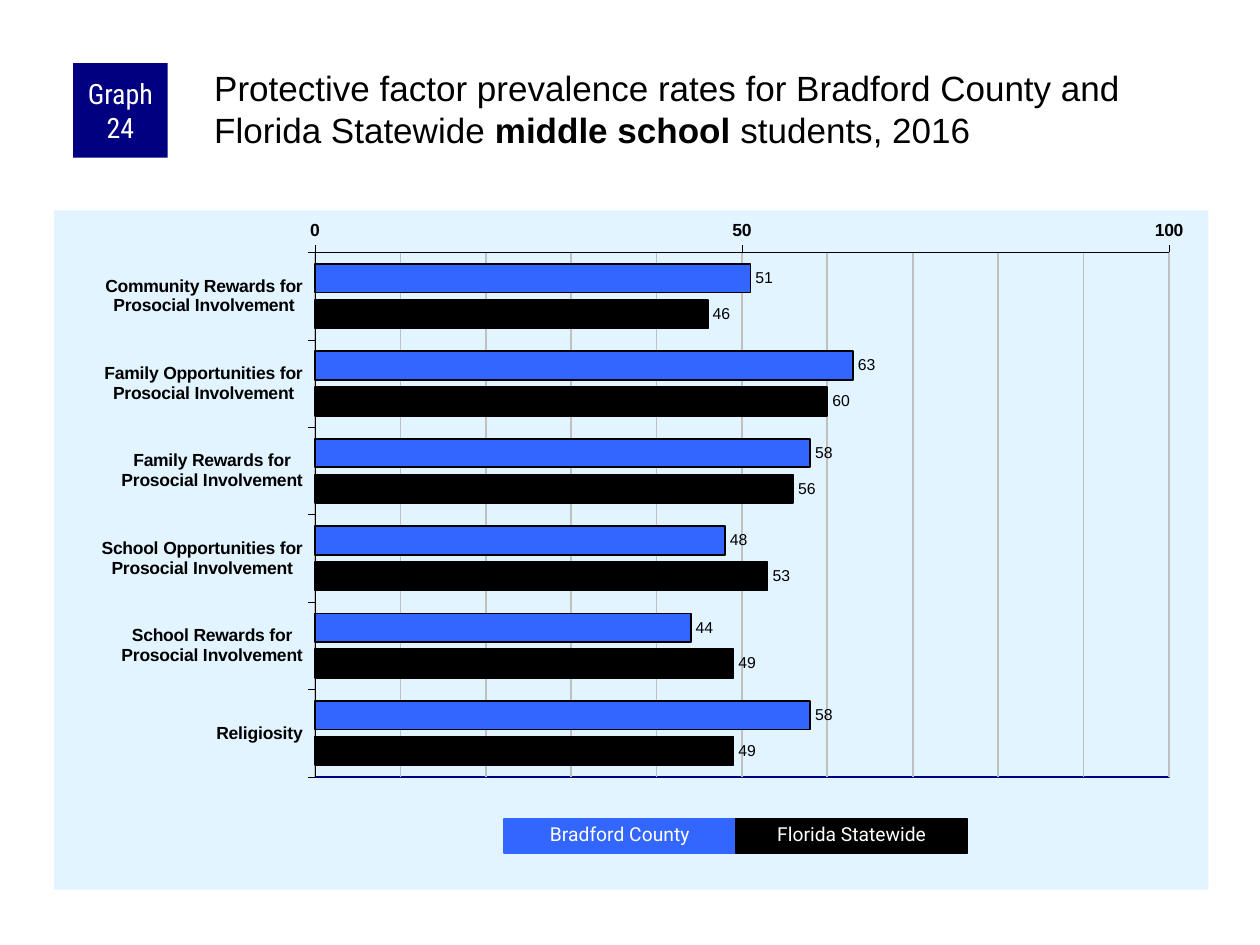
from dataclasses import dataclass

from lxml import etree
from pptx import Presentation
from pptx.chart.data import CategoryChartData
from pptx.dml.color import RGBColor
from pptx.enum.chart import (XL_AXIS_CROSSES, XL_CHART_TYPE, XL_LABEL_POSITION,
                             XL_TICK_MARK)
from pptx.enum.shapes import MSO_SHAPE
from pptx.enum.text import MSO_ANCHOR, MSO_AUTO_SIZE, PP_ALIGN
from pptx.oxml import parse_xml
from pptx.oxml.ns import nsdecls, qn
from pptx.util import Inches, Pt

BAR = XL_CHART_TYPE.BAR_CLUSTERED
OUT_END = XL_LABEL_POSITION.OUTSIDE_END
TICK_OUT, TICK_NONE = XL_TICK_MARK.OUTSIDE, XL_TICK_MARK.NONE
AT_MAX = XL_AXIS_CROSSES.MAXIMUM
RECT = MSO_SHAPE.RECTANGLE
TOP, MIDDLE = MSO_ANCHOR.TOP, MSO_ANCHOR.MIDDLE
CENTER = PP_ALIGN.CENTER
GROW = MSO_AUTO_SIZE.SHAPE_TO_FIT_TEXT


@dataclass(frozen=True)
class Theme:
    navy: str = "000080"
    blue: str = "3366FF"
    black: str = "000000"
    white: str = "FFFFFF"
    panel: str = "E1F4FF"
    grid: str = "C0C0C0"
    body: str = "Arial"
    badge: str = "Roboto Condensed"
    legend: str = "Roboto"
    title_pt: float = 20
    badge_pt: float = 16
    legend_pt: float = 11
    chart_pt: float = 11.8
    axis_pt: float = 10
    value_pt: float = 9


@dataclass(frozen=True)
class Box:
    """Left, top, width and height as percent of the slide."""
    x: float
    y: float
    w: float
    h: float


@dataclass(frozen=True)
class Group:
    name: str
    color: str
    values: tuple[int, ...]


T = Theme()
WIDTH, HEIGHT = Inches(10), Inches(7.5)

CHART = Box(4.3, 22.27, 91.6, 71.87)
PLOT = Box(22.6, 6.2, 74, 77.2)  # percent of the chart
BADGE = Box(5.8, 6.67, 7.5, 10)
TITLE = Box(16.7, 6.67, 79.2, 11.07)
LEGEND = Box(40, 86.67, 18.4, 3.6)  # first key; the next follows to its right

FACTORS = (
    "Community Rewards for\nProsocial Involvement",
    "Family Opportunities for\nProsocial Involvement",
    "Family Rewards for\nProsocial Involvement",
    "School Opportunities for\nProsocial Involvement",
    "School Rewards for\nProsocial Involvement",
    "Religiosity",
)
GROUPS = (
    Group("Bradford County", T.blue, (51, 63, 58, 48, 44, 58)),
    Group("Florida Statewide", T.black, (46, 60, 56, 53, 49, 49)),
)
TITLE_RUNS = (
    ("Protective factor prevalence rates for Bradford County and Florida Statewide ", False),
    ("middle school ", True),
    ("students, 2016", False),
)


def place(box: Box) -> tuple[int, int, int, int]:
    return (int(WIDTH * box.x / 100), int(HEIGHT * box.y / 100),
            int(WIDTH * box.w / 100), int(HEIGHT * box.h / 100))


def set_font(font, name: str, size: float, color: str, bold: bool = False) -> None:
    font.name, font.size, font.bold = name, Pt(size), bold
    font.color.rgb = RGBColor.from_string(color)


def set_line(line, color: str, width: float) -> None:
    line.color.rgb = RGBColor.from_string(color)
    line.width = Pt(width)


def set_fill(fill, color: str) -> None:
    fill.solid()
    fill.fore_color.rgb = RGBColor.from_string(color)


def add_block(slide, box: Box, text: str, color: str, font: str, size: float):
    """Filled rectangle with one centred white run."""
    sp = slide.shapes.add_shape(RECT, *place(box))
    sp.shadow.inherit = False
    set_fill(sp.fill, color)
    sp.line.fill.background()
    p = sp.text_frame.paragraphs[0]
    p.alignment = CENTER
    r = p.add_run()
    r.text = text
    set_font(r.font, font, size, T.white)
    return sp


def add_badge(slide) -> None:
    tf = add_block(slide, BADGE, "Graph 24", T.navy, T.badge, T.badge_pt).text_frame
    tf.word_wrap = True
    tf.vertical_anchor = MIDDLE
    tf.margin_left = tf.margin_right = Inches(0.05)
    tf.margin_top = tf.margin_bottom = 0


def add_title(slide) -> None:
    tf = slide.shapes.add_textbox(*place(TITLE)).text_frame
    tf.word_wrap = True
    tf.margin_left = tf.margin_top = Inches(0.03)
    tf.margin_right = tf.margin_bottom = 0
    p = tf.paragraphs[0]
    for text, bold in TITLE_RUNS:
        r = p.add_run()
        r.text = text
        set_font(r.font, T.body, T.title_pt, T.black, bold)


def add_legend(slide) -> None:
    for i, group in enumerate(GROUPS):
        box = Box(LEGEND.x + i * LEGEND.w, LEGEND.y, LEGEND.w, LEGEND.h)
        sp = add_block(slide, box, group.name, group.color, T.legend, T.legend_pt)
        set_line(sp.line, group.color, 0.75)
        tf = sp.text_frame
        tf.word_wrap = True
        tf.auto_size = GROW
        tf.vertical_anchor = TOP
        tf.paragraphs[0].line_spacing = 0.9


def area_props(paint: str) -> etree.ElementBase:
    return parse_xml(f'<c:spPr {nsdecls("c", "a")}>{paint}</c:spPr>')


def solid(color: str) -> str:
    return f'<a:solidFill><a:srgbClr val="{color}"/></a:solidFill>'


def style_areas(chart) -> None:
    """Panel fill, plot border and fixed inner plot layout."""
    space = chart.element
    space.find(qn("c:chart")).addnext(
        area_props(solid(T.panel) + "<a:ln><a:noFill/></a:ln>"))
    plot = space.find(f'.//{qn("c:plotArea")}')
    plot.append(area_props(f'<a:noFill/><a:ln w="{Pt(1)}">{solid(T.navy)}</a:ln>'))
    for old in plot.findall(qn("c:layout")):
        plot.remove(old)
    modes = '<c:layoutTarget val="inner"/><c:xMode val="edge"/><c:yMode val="edge"/>'
    sizes = "".join(f'<c:{k} val="{getattr(PLOT, k) / 100:.3f}"/>' for k in "xywh")
    plot.insert(0, parse_xml(f'<c:layout {nsdecls("c")}><c:manualLayout>{modes}{sizes}'
                             "</c:manualLayout></c:layout>"))


def add_factor_chart(slide) -> None:
    data = CategoryChartData(number_format="0")
    data.categories = FACTORS
    for group in GROUPS:
        data.add_series(group.name, group.values)
    chart = slide.shapes.add_chart(BAR, *place(CHART), data).chart
    chart.has_legend = chart.has_title = False
    style_areas(chart)
    set_font(chart.font, T.body, T.chart_pt, T.black)

    # Bars
    plot = chart.plots[0]
    plot.gap_width, plot.overlap, plot.vary_by_categories = 80, -25, False
    for series, group in zip(plot.series, GROUPS):
        set_fill(series.format.fill, group.color)
        set_line(series.format.line, T.black, 1)
        labels = series.data_labels
        labels.show_value = True
        labels.position = OUT_END
        set_font(labels.font, T.body, T.value_pt, T.black)

    # Axes
    cats, vals = chart.category_axis, chart.value_axis
    for axis in (cats, vals):
        axis.major_tick_mark, axis.minor_tick_mark = TICK_OUT, TICK_NONE
        set_line(axis.format.line, T.black, 0.25)
        set_font(axis.tick_labels.font, T.body, T.axis_pt, T.black, True)
    cats.reverse_order = True
    cats.crosses = AT_MAX
    vals.minimum_scale, vals.maximum_scale = 0, 100
    vals.major_unit, vals.minor_unit = 50, 10
    vals.has_major_gridlines = vals.has_minor_gridlines = True
    for lines in (vals.major_gridlines, vals.minor_gridlines) if hasattr(
            vals, "minor_gridlines") else (vals.major_gridlines,):
        set_line(lines.format.line, T.grid, 1)
    minor = chart.element.find(f'.//{qn("c:minorGridlines")}')
    if minor.find(qn("c:spPr")) is None:
        minor.append(area_props(f'<a:ln w="{Pt(1)}">{solid(T.grid)}</a:ln>'))


def main() -> None:
    prs = Presentation()
    prs.slide_width, prs.slide_height = WIDTH, HEIGHT
    slide = prs.slides.add_slide(prs.slide_layouts[6])
    add_factor_chart(slide)
    add_badge(slide)
    add_title(slide)
    add_legend(slide)
    prs.save("out.pptx")


if __name__ == "__main__":
    main()
